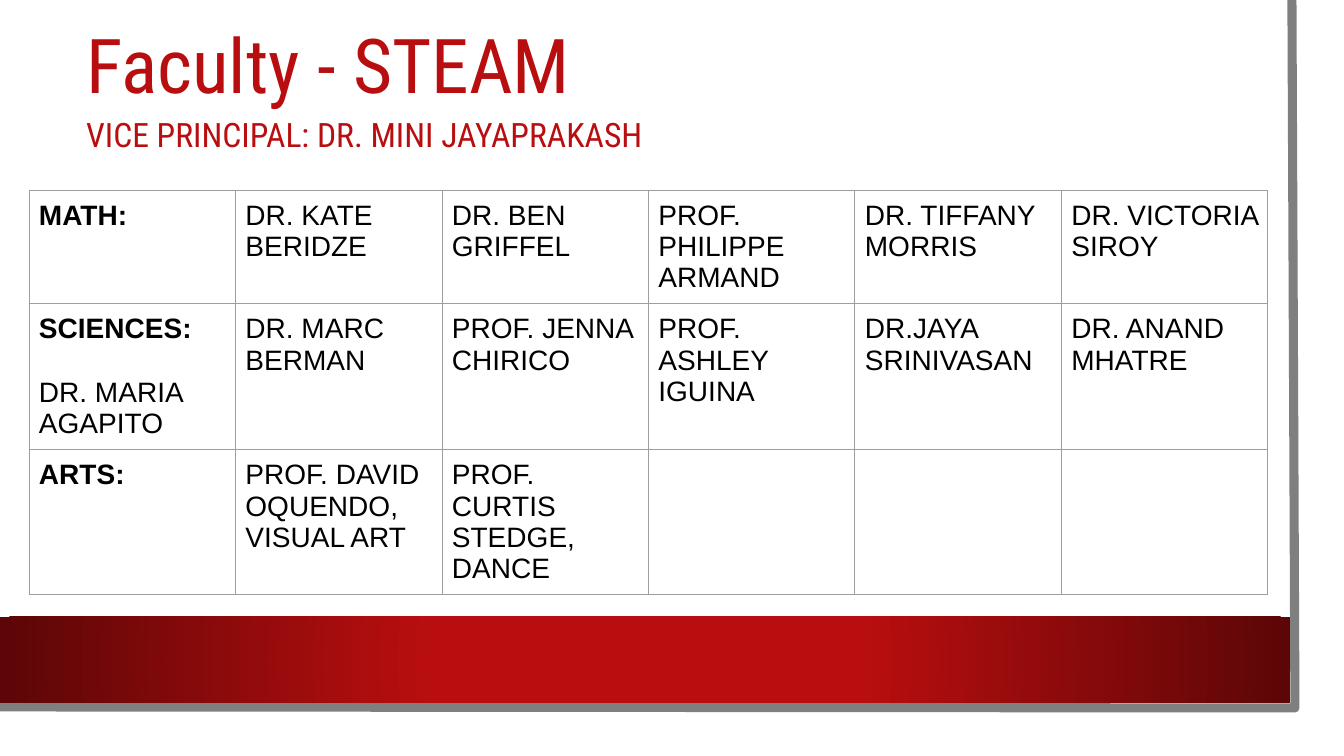
from dataclasses import dataclass

from pptx import Presentation
from pptx.dml.color import RGBColor
from pptx.enum.shapes import MSO_SHAPE
from pptx.enum.text import MSO_ANCHOR, MSO_AUTO_SIZE, PP_ALIGN
from pptx.oxml import parse_xml
from pptx.oxml.ns import nsdecls
from pptx.util import Emu, Pt


@dataclass(frozen=True)
class Theme:
    red: str = "B80E0F"
    dark_red: str = "5C0607"
    frame: str = "7F7F7F"
    border: str = "9E9E9E"
    ink: str = "000000"
    heading_font: str = "Roboto Condensed"
    body_font: str = "Arial"
    title_size: int = 54
    subtitle_size: int = 24
    cell_size: int = 20


THEME = Theme()
FACULTY = [
    ["MATH:", "DR. KATE BERIDZE", "DR. BEN GRIFFEL", "PROF. PHILIPPE ARMAND",
     "DR. TIFFANY MORRIS", "DR. VICTORIA SIROY"],
    ["SCIENCES:\nDR. MARIA AGAPITO", "DR. MARC BERMAN", "PROF. JENNA CHIRICO",
     "PROF. ASHLEY IGUINA", "DR.JAYA SRINIVASAN", "DR. ANAND MHATRE"],
    ["ARTS:", "PROF. DAVID OQUENDO,\nVISUAL ART", "PROF. CURTIS STEDGE, DANCE",
     "", "", ""],
]


def px(length):
    return Emu(round(length * 914400 / 100.8))


def add_span(para, text, font, size, color, bold=False):
    span = para.add_run()
    span.text = text
    span.font.name = font
    span.font.size = Pt(size)
    span.font.bold = bold
    span.font.color.rgb = RGBColor.from_string(color)


def add_page_edge(page):
    corners = [(px(x), px(y)) for x, y in [(1292, 0), (1295, 708), (-3, 707)]]
    builder = page.shapes.build_freeform(*corners[0])
    builder.add_line_segments(corners[1:], close=False)
    edge = builder.convert_to_shape()
    edge.shadow.inherit = False
    edge.fill.background()
    edge.line.color.rgb = RGBColor.from_string(THEME.frame)
    edge.line.width = Pt(6.5)


def add_band(page):
    band = page.shapes.add_shape(MSO_SHAPE.RECTANGLE, px(0), px(617), px(1290), px(86))
    band.shadow.inherit = False
    band.line.fill.background()
    stops = [(0, THEME.red), (34, THEME.red), (100, THEME.dark_red)]
    stop_xml = "".join(
        f'<a:gs pos="{percent * 1000}"><a:srgbClr val="{color}"/></a:gs>'
        for percent, color in stops)
    band._element.spPr.prstGeom.addnext(parse_xml(
        f'<a:gradFill {nsdecls("a")}><a:gsLst>{stop_xml}</a:gsLst><a:path path="circle">'
        '<a:fillToRect l="50000" t="50000" r="50000" b="50000"/></a:path></a:gradFill>'))


def add_heading(page, title, subtitle):
    box = page.shapes.title
    box.left, box.top, box.width, box.height = px(76), px(7), px(1146), px(169)
    frame = box.text_frame
    frame.word_wrap = True
    frame.auto_size = MSO_AUTO_SIZE.NONE
    frame.vertical_anchor = MSO_ANCHOR.MIDDLE
    lines = [(title, THEME.title_size, 0), (subtitle, THEME.subtitle_size, 6)]
    for index, (text, size, gap) in enumerate(lines):
        para = frame.add_paragraph() if index else frame.paragraphs[0]
        para.alignment = PP_ALIGN.LEFT
        para.line_spacing = 0.9
        if gap:
            para.space_before = Pt(gap)
        add_span(para, text, THEME.heading_font, size, THEME.red)


def add_borders(cell):
    properties = cell._tc.get_or_add_tcPr()
    for side in ("lnL", "lnR", "lnT", "lnB"):
        properties.append(parse_xml(
            f'<a:{side} {nsdecls("a")} w="{Pt(0.75)}"><a:solidFill>'
            f'<a:srgbClr val="{THEME.border}"/></a:solidFill></a:{side}>'))


def fill_cell(cell, text, is_label):
    cell.margin_left = cell.margin_right = px(10)
    cell.margin_top = cell.margin_bottom = px(10)
    add_borders(cell)
    cell.fill.background()
    for index, line in enumerate(text.splitlines()):
        para = cell.text_frame.add_paragraph() if index else cell.text_frame.paragraphs[0]
        if index and is_label:
            para.space_before = Pt(23)
        add_span(para, line, THEME.body_font, THEME.cell_size, THEME.ink,
                 bold=is_label and index == 0)


def add_faculty_table(page, rows):
    row_height = 92
    table = page.shapes.add_table(
        len(rows), len(rows[0]), px(29), px(190), px(1239), px(row_height * len(rows))).table
    table.first_row = False
    table.horz_banding = False
    for row, names in zip(table.rows, rows):
        row.height = px(row_height)
        for column, (cell, name) in enumerate(zip(row.cells, names)):
            fill_cell(cell, name, is_label=column == 0)


def main():
    deck = Presentation()
    deck.slide_width, deck.slide_height = px(1344), px(756)
    page = deck.slides.add_slide(deck.slide_layouts[5])
    add_page_edge(page)
    add_band(page)
    add_heading(page, "Faculty - STEAM", "VICE PRINCIPAL: DR. MINI JAYAPRAKASH")
    add_faculty_table(page, FACULTY)
    deck.save("out.pptx")


if __name__ == "__main__":
    main()
